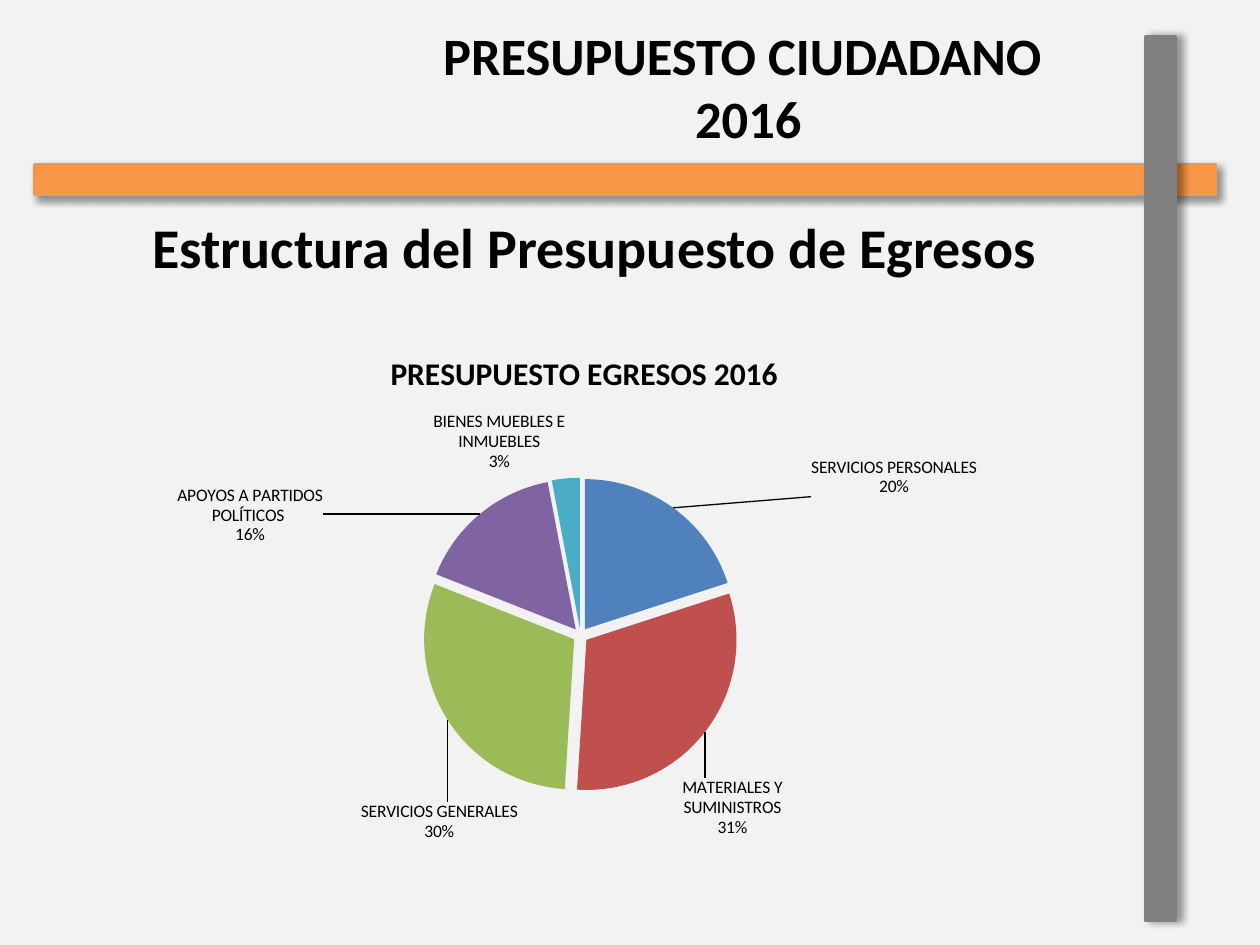
from dataclasses import dataclass

from lxml.etree import SubElement
from pptx import Presentation
from pptx.chart.data import CategoryChartData
from pptx.dml.color import RGBColor
from pptx.enum.chart import XL_CHART_TYPE as ChartType
from pptx.enum.shapes import MSO_SHAPE as Shape
from pptx.enum.text import PP_ALIGN as Align
from pptx.oxml import parse_xml
from pptx.oxml.ns import nsdecls, qn
from pptx.util import Inches, Pt


@dataclass(frozen=True)
class Theme:
    """Colours, font and type sizes of the slide."""
    background: str = "F2F2F2"
    ink: str = "000000"
    orange: str = "F79646"
    gray: str = "808080"
    font: str = "Calibri"
    heading_size: int = 30
    subtitle_size: int = 32
    chart_title_size: int = 18
    label_size: int = 10


THEME = Theme()
WIDTH, HEIGHT = Inches(10), Inches(7.5)
COLUMNS = ROWS = 100
EXPENSES = [
    ("SERVICIOS PERSONALES", 20, "4F81BD", (0.14, -0.01)),
    ("MATERIALES Y SUMINISTROS", 31, "C0504D", (-0.03, 0.08)),
    ("SERVICIOS GENERALES", 30, "9BBB59", (0.08, 0.15)),
    ("APOYOS A PARTIDOS POLÍTICOS ", 16, "8064A2", (-0.16, 0.07)),
    ("BIENES MUEBLES E INMUEBLES", 3, "4BACC6", None),
]


def place(column, row, columns, rows):
    """Turn grid cells into left, top, width and height."""
    return (int(WIDTH * column / COLUMNS), int(HEIGHT * row / ROWS),
            int(WIDTH * columns / COLUMNS), int(HEIGHT * rows / ROWS))


def style_font(font, size, bold=False):
    """Apply the theme font in ink colour."""
    font.name, font.size, font.bold = THEME.font, Pt(size), bold
    font.color.rgb = RGBColor.from_string(THEME.ink)


def add_bar(slide, cells, color, shadow_degrees):
    """Draw a solid bar with a soft outer shadow."""
    bar = slide.shapes.add_shape(Shape.RECTANGLE, *place(*cells))
    bar.fill.solid()
    bar.fill.fore_color.rgb = bar.line.color.rgb = RGBColor.from_string(color)
    bar.line.width = Pt(2)
    bar.shadow.inherit = False
    effects = bar._element.spPr.find(qn("a:effectLst"))
    shadow = SubElement(effects, qn("a:outerShdw"), blurRad=str(Pt(4)), dist=str(Pt(3)),
                        dir=str(shadow_degrees * 60000), algn="tl", rotWithShape="0")
    shade = SubElement(shadow, qn("a:srgbClr"), val=THEME.ink)
    SubElement(shade, qn("a:alpha"), val="40000")


def add_heading(slide, cells, text, size):
    """Write a bold centred heading."""
    frame = slide.shapes.add_textbox(*place(*cells)).text_frame
    frame.word_wrap = True
    frame.text = text
    for paragraph in frame.paragraphs:
        paragraph.alignment = Align.CENTER
        for run in paragraph.runs:
            style_font(run.font, size, bold=True)


def manual_layout(x, y, extra=""):
    """Return the XML of a manual chart layout."""
    return f'<c:manualLayout>{extra}<c:x val="{x}"/><c:y val="{y}"/>'


def layout_xml(x, y, modes="", extent=""):
    """Return a closed layout element for a chart part."""
    return (f'<c:layout {nsdecls("c")}>{manual_layout(x, y, modes)}{extent}'
            '</c:manualLayout></c:layout>')


def labels_xml():
    """Return category and percentage labels with leader lines."""
    shown = ('<c:dLblPos val="outEnd"/><c:showLegendKey val="0"/><c:showVal val="0"/>'
             '<c:showCatName val="1"/><c:showSerName val="0"/><c:showPercent val="1"/>'
             '<c:showBubbleSize val="0"/><c:separator>\n</c:separator>')
    moved = "".join(
        f'<c:dLbl><c:idx val="{index}"/>{layout_xml(*offset)}{shown}</c:dLbl>'
        for index, (_, _, _, offset) in enumerate(EXPENSES) if offset)
    leader = ('<c:showLeaderLines val="1"/><c:leaderLines><c:spPr><a:ln w="9525"><a:solidFill>'
              f'<a:srgbClr val="{THEME.ink}"/></a:solidFill></a:ln></c:spPr></c:leaderLines>')
    return f'<c:dLbls {nsdecls("c", "a")}>{moved}{shown}{leader}</c:dLbls>'


def add_expense_pie(slide, cells):
    """Draw the exploded pie of expenses."""
    data = CategoryChartData()
    data.categories = [name for name, *_ in EXPENSES]
    data.add_series("Series 1", [share for _, share, *_ in EXPENSES])
    chart = slide.shapes.add_chart(ChartType.PIE, *place(*cells), data).chart
    style_font(chart.font, THEME.label_size)
    chart.has_legend = False
    chart.has_title = True
    title = chart.chart_title
    title.text_frame.text = "PRESUPUESTO EGRESOS 2016"
    style_font(title.text_frame.paragraphs[0].runs[0].font, THEME.chart_title_size, bold=True)
    title.include_in_layout = False
    edges = '<c:xMode val="edge"/><c:yMode val="edge"/>'
    for old in title._element.findall(qn("c:layout")):
        title._element.remove(old)
    title._element.find(qn("c:tx")).addnext(parse_xml(layout_xml(0.3, 0.04, edges)))

    plot = chart.plots[0]
    plot.vary_by_categories = True
    series = plot.series[0]
    for index, (_, _, color, _) in enumerate(EXPENSES):
        fill = series.points[index].format.fill
        fill.solid()
        fill.fore_color.rgb = RGBColor.from_string(color)
    explosion = parse_xml(f'<c:explosion {nsdecls("c")} val="5"/>')
    series._element.find(qn("c:dPt")).addprevious(explosion)
    series._element.find(qn("c:cat")).addprevious(parse_xml(labels_xml()))
    area = plot._element.getparent()
    for old in area.findall(qn("c:layout")):
        area.remove(old)
    extent = '<c:w val="0.33"/><c:h val="0.61"/>'
    inner = '<c:layoutTarget val="inner"/>' + edges
    area.insert(0, parse_xml(layout_xml(0.34, 0.29, inner, extent)))


def main():
    """Build and save the budget slide."""
    deck = Presentation()
    deck.slide_width, deck.slide_height = WIDTH, HEIGHT
    slide = deck.slides.add_slide(deck.slide_layouts[6])
    slide.background.fill.solid()
    slide.background.fill.fore_color.rgb = RGBColor.from_string(THEME.background)
    add_bar(slide, (2.75, 17.4, 93.7, 3.2), THEME.orange, 45)
    add_bar(slide, (90.9, 3.87, 2.4, 93.47), THEME.gray, 0)
    add_heading(slide, (1.6, 21.87, 92.2, 8.53), "Estructura del Presupuesto de Egresos ",
                THEME.subtitle_size)
    add_expense_pie(slide, (7.8, 34.4, 75.8, 55.2))
    add_heading(slide, (28.7, 1.73, 61.4, 12.53), "PRESUPUESTO CIUDADANO \v2016",
                THEME.heading_size)
    deck.save("out.pptx")


if __name__ == "__main__":
    main()
